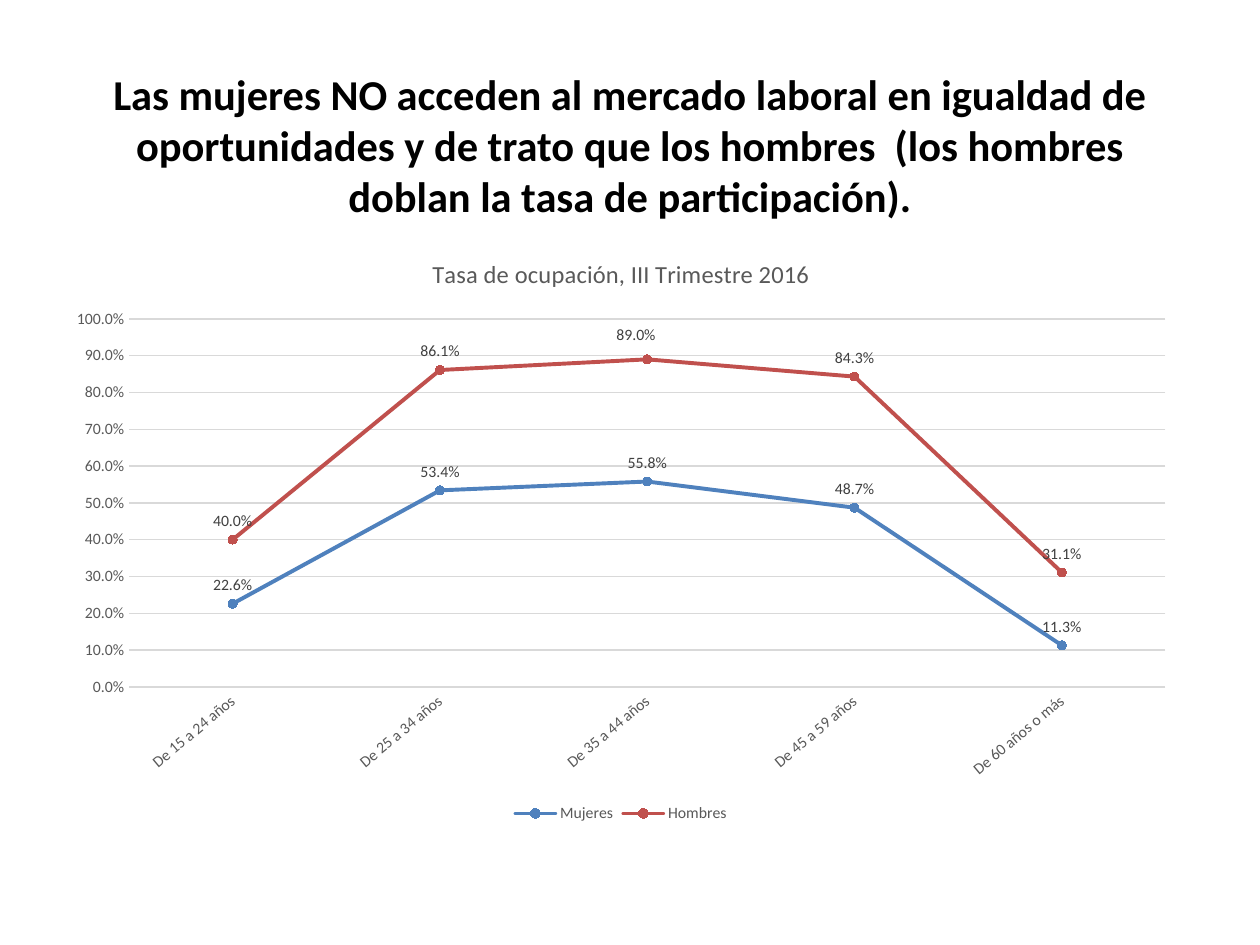
import pptx
import pptx.chart.data
import pptx.dml.color
import pptx.enum.chart
import pptx.enum.text
import pptx.util
from lxml import etree
from pptx.util import Inches, Pt

FONT = "Calibri"
COLORS = {
    "title": "000000",
    "axis": "595959",
    "label": "404040",
    "grid": "D9D9D9",
    "Mujeres": "4F81BD",
    "Hombres": "C0504D",
}
AGES = ["De 15 a 24 años", "De 25 a 34 años", "De 35 a 44 años",
        "De 45 a 59 años", "De 60 años o más"]
RATES = {
    "Mujeres": [0.226, 0.534, 0.558, 0.487, 0.113],
    "Hombres": [0.4, 0.861, 0.89, 0.843, 0.311],
}
CHART_NS = "http://schemas.openxmlformats.org/drawingml/2006/chart"
DRAWING_NS = "http://schemas.openxmlformats.org/drawingml/2006/main"


def color(name):
    return pptx.dml.color.RGBColor.from_string(COLORS[name])


def style_font(font, size, color_name, bold=False):
    font.name = FONT
    font.size = Pt(size)
    font.bold = bold
    font.color.rgb = color(color_name)


def style_line(line, color_name, width):
    line.color.rgb = color(color_name)
    line.width = Pt(width)


def add_title(slide, left, top, width, height):
    title = slide.shapes.title
    title.left, title.top, title.width, title.height = left, top, width, height
    frame = title.text_frame
    frame.word_wrap = True
    frame.auto_size = pptx.enum.text.MSO_AUTO_SIZE.NONE
    frame.vertical_anchor = pptx.enum.text.MSO_ANCHOR.TOP
    frame.margin_top = Inches(0.54)
    frame.text = ("Las mujeres NO acceden al mercado laboral en igualdad de "
                  "oportunidades y de trato que los hombres  (los hombres "
                  "doblan la tasa de participación).")
    paragraph = frame.paragraphs[0]
    paragraph.alignment = pptx.enum.text.PP_ALIGN.CENTER
    style_font(paragraph.font, 24.3, "title", bold=True)


def rotate_labels(axis, degrees):
    body = axis._element.find(f"{{{CHART_NS}}}txPr/{{{DRAWING_NS}}}bodyPr")
    body.set("rot", str(degrees * 60000))
    body.set("vert", "horz")


def style_axes(chart):
    ages, rates = chart.category_axis, chart.value_axis
    for axis in (ages, rates):
        axis.major_tick_mark = pptx.enum.chart.XL_TICK_MARK.NONE
        axis.minor_tick_mark = pptx.enum.chart.XL_TICK_MARK.NONE
        style_font(axis.tick_labels.font, 9, "axis")
    rotate_labels(ages, -40)
    style_line(ages.format.line, "grid", 0.75)
    rates.format.line.fill.background()
    rates.minimum_scale, rates.maximum_scale, rates.major_unit = 0, 1, 0.1
    rates.has_major_gridlines = True
    style_line(rates.major_gridlines.format.line, "grid", 0.75)
    rates.tick_labels.number_format = "0.0%"
    rates.tick_labels.number_format_is_linked = False


def style_series(series):
    style_line(series.format.line, series.name, 2.25)
    line = series._element.find(f"{{{CHART_NS}}}spPr/{{{DRAWING_NS}}}ln")
    line.set("cap", "rnd")
    series.smooth = False
    marker = series.marker
    marker.style = pptx.enum.chart.XL_MARKER_STYLE.CIRCLE
    marker.size = 5
    marker.format.fill.solid()
    marker.format.fill.fore_color.rgb = color(series.name)
    style_line(marker.format.line, series.name, 0.75)
    labels = series.data_labels
    labels.show_value = True
    labels.position = pptx.enum.chart.XL_LABEL_POSITION.ABOVE
    labels.number_format = "0.0%"
    labels.number_format_is_linked = False
    style_font(labels.font, 9, "label")


def shift_label(series, index, x, y):
    label = series.points[index].data_label
    label.position = pptx.enum.chart.XL_LABEL_POSITION.ABOVE
    style_font(label.font, 9, "label")
    element = series.data_labels._element.find(f"{{{CHART_NS}}}dLbl")
    layout = etree.fromstring(
        f'<c:layout xmlns:c="{CHART_NS}"><c:manualLayout>'
        f'<c:x val="{x}"/><c:y val="{y}"/></c:manualLayout></c:layout>')
    element.insert(1, layout)


def add_rate_chart(slide, left, top, width, height):
    data = pptx.chart.data.CategoryChartData(number_format="0.0%")
    data.categories = AGES
    for name, values in RATES.items():
        data.add_series(name, values)
    chart = slide.shapes.add_chart(
        pptx.enum.chart.XL_CHART_TYPE.LINE_MARKERS,
        left, top, width, height, data).chart
    chart.font.name = FONT
    chart.font.size = Pt(10)
    chart.has_title = True
    chart.chart_title.text_frame.text = "Tasa de ocupación, III Trimestre 2016"
    style_font(chart.chart_title.text_frame.paragraphs[0].font, 14, "axis")
    chart.has_legend = True
    chart.legend.position = pptx.enum.chart.XL_LEGEND_POSITION.BOTTOM
    chart.legend.include_in_layout = False
    style_font(chart.legend.font, 9, "axis")
    style_axes(chart)
    plot = chart.plots[0]
    plot.vary_by_categories = False
    for series in plot.series:
        style_series(series)
    shift_label(plot.series[1], 2, -0.01, -0.01)


def main():
    presentation = pptx.Presentation()
    presentation.slide_width = Inches(10)
    presentation.slide_height = Inches(7.5)
    slide = presentation.slides.add_slide(presentation.slide_layouts[5])
    add_title(slide, Inches(0.5), Inches(0), Inches(9), Inches(1.31))
    add_rate_chart(slide, Inches(0.43), Inches(1.86), Inches(9), Inches(4.71))
    presentation.save("out.pptx")


if __name__ == "__main__":
    main()
